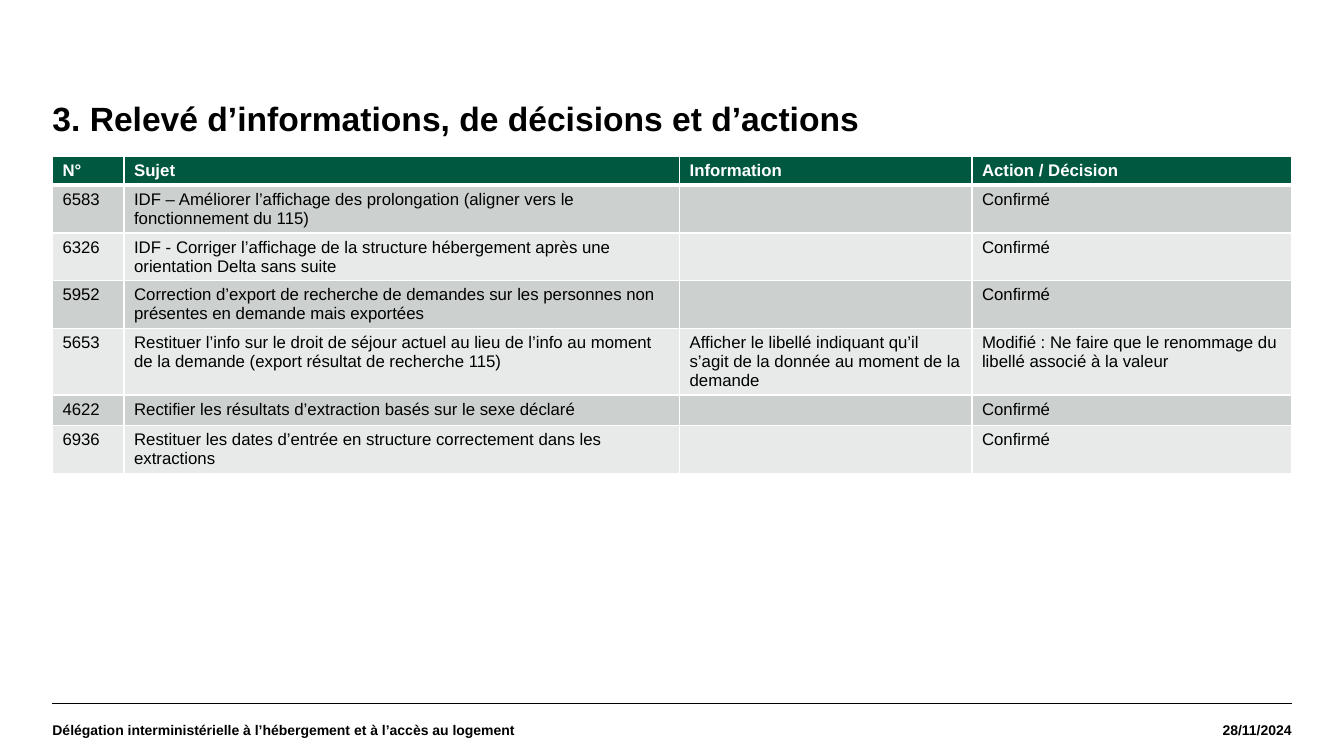
from lxml import etree
from pptx import Presentation
from pptx.dml.color import RGBColor
from pptx.enum.shapes import MSO_CONNECTOR
from pptx.enum.text import MSO_ANCHOR, MSO_AUTO_SIZE, PP_ALIGN
from pptx.oxml.ns import qn
from pptx.util import Inches, Pt

LINE = MSO_CONNECTOR.STRAIGHT
TOP, MID = MSO_ANCHOR.TOP, MSO_ANCHOR.MIDDLE
LEFT, RIGHT = PP_ALIGN.LEFT, PP_ALIGN.RIGHT
FIXED = MSO_AUTO_SIZE.NONE

COLS = [0.71, 5.51, 2.9, 3.17]
HEADS = ["N°", "Sujet", "Information", "Action / Décision"]
DONE = "Confirmé"
ITEMS = [
    ["6583", "IDF – Améliorer l’affichage des prolongation (aligner vers le fonctionnement du 115)", "", DONE],
    ["6326", "IDF - Corriger l’affichage de la structure hébergement après une orientation Delta sans suite", "", DONE],
    ["5952", "Correction d’export de recherche de demandes sur les personnes non présentes en demande mais exportées", "", DONE],
    ["5653", "Restituer l’info sur le droit de séjour actuel au lieu de l’info au moment de la demande (export résultat de recherche 115)",
     "Afficher le libellé indiquant qu’il s’agit de la donnée au moment de la demande",
     "Modifié : Ne faire que le renommage du libellé associé à la valeur"],
    ["4622", "Rectifier les résultats d’extraction basés sur le sexe déclaré", "", DONE],
    ["6936", "Restituer les dates d’entrée en structure correctement dans les extractions", "", DONE],
]


def color(code):
    return RGBColor.from_string(code)


def write(frame, text, size=12, ink="000000", bold=False, align=LEFT, space=None):
    para = frame.paragraphs[0]
    para.alignment = align
    if space:
        para.line_spacing = space
    if not text:
        end = etree.SubElement(para._p, qn("a:endParaRPr"))
        end.set("sz", str(size * 100))
        return
    run = para.add_run()
    run.text = text
    font = run.font
    font.name, font.size, font.bold = "Arial", Pt(size), bold
    font.color.rgb = color(ink)


class Deck:
    dark, white, black = "005841", "FFFFFF", "000000"
    bands = ["CCD1CF", "E7EAE9"]
    left, wide = 0.52, 12.29

    def __init__(self):
        self.file = Presentation()
        self.file.slide_width = Inches(13.33)
        self.file.slide_height = Inches(7.5)
        self.slide = self.file.slides.add_slide(self.file.slide_layouts[5])

    def place(self, shape, left, top, width, height, anchor):
        shape.left, shape.top = Inches(left), Inches(top)
        shape.width, shape.height = Inches(width), Inches(height)
        frame = shape.text_frame
        frame.margin_left = frame.margin_right = 0
        frame.margin_top = frame.margin_bottom = 0
        frame.word_wrap = True
        frame.auto_size = FIXED
        frame.vertical_anchor = anchor
        return frame

    def title(self, text):
        frame = self.place(self.slide.shapes.title, self.left, 1.02, self.wide, 1.05, TOP)
        write(frame, text, size=24, bold=True, space=0.9)

    def label(self, text, left, width, align=LEFT):
        box = self.slide.shapes.add_textbox(0, 0, 0, 0)
        frame = self.place(box, left, 6.98, width, 0.52, MID)
        write(frame, text, size=10, bold=True, align=align)

    def rule(self, top):
        ends = [Inches(x) for x in (self.left, top, self.left + self.wide, top)]
        line = self.slide.shapes.add_connector(LINE, *ends)
        line.line.color.rgb = color(self.black)
        line.line.width = Pt(0.8)
        etree.SubElement(line._element.spPr, qn("a:effectLst"))

    def edge(self, cell, side, width):
        props = cell._tc.get_or_add_tcPr()
        line = etree.SubElement(props, qn("a:" + side), w=str(Pt(width)))
        fill = etree.SubElement(line, qn("a:solidFill"))
        etree.SubElement(fill, qn("a:srgbClr"), val=self.white)

    def cell(self, cell, text, fill, head, below):
        for side, width in (("lnL", 1), ("lnR", 1), ("lnT", 3 if below else 1), ("lnB", 3 if head else 1)):
            self.edge(cell, side, width)
        cell.fill.solid()
        cell.fill.fore_color.rgb = color(fill)
        write(cell.text_frame, text, ink=self.white if head else self.black, bold=head)

    def table(self, top, cols, rows):
        high = [0.26, 0.4] + [0.26] * (len(rows) - 2)
        frame = self.slide.shapes.add_table(
            len(rows), len(cols), Inches(self.left), Inches(top),
            Inches(sum(cols)), Inches(sum(high)))
        grid = frame.table
        for col, width in zip(grid.columns, cols):
            col.width = Inches(width)
        for r, row in enumerate(rows):
            grid.rows[r].height = Inches(high[r])
            fill = self.bands[(r - 1) % 2] if r else self.dark
            for c, text in enumerate(row):
                self.cell(grid.cell(r, c), text, fill, r == 0, r == 1)


def main():
    deck = Deck()
    deck.rule(6.98)
    deck.title("3. Relevé d’informations, de décisions et d’actions")
    deck.label("28/11/2024", 11.1, 1.71, RIGHT)
    deck.label("Délégation interministérielle à l’hébergement et à l’accès au logement", deck.left, 8.61)
    deck.table(1.55, COLS, [HEADS] + ITEMS)
    deck.file.save("out.pptx")


if __name__ == "__main__":
    main()
